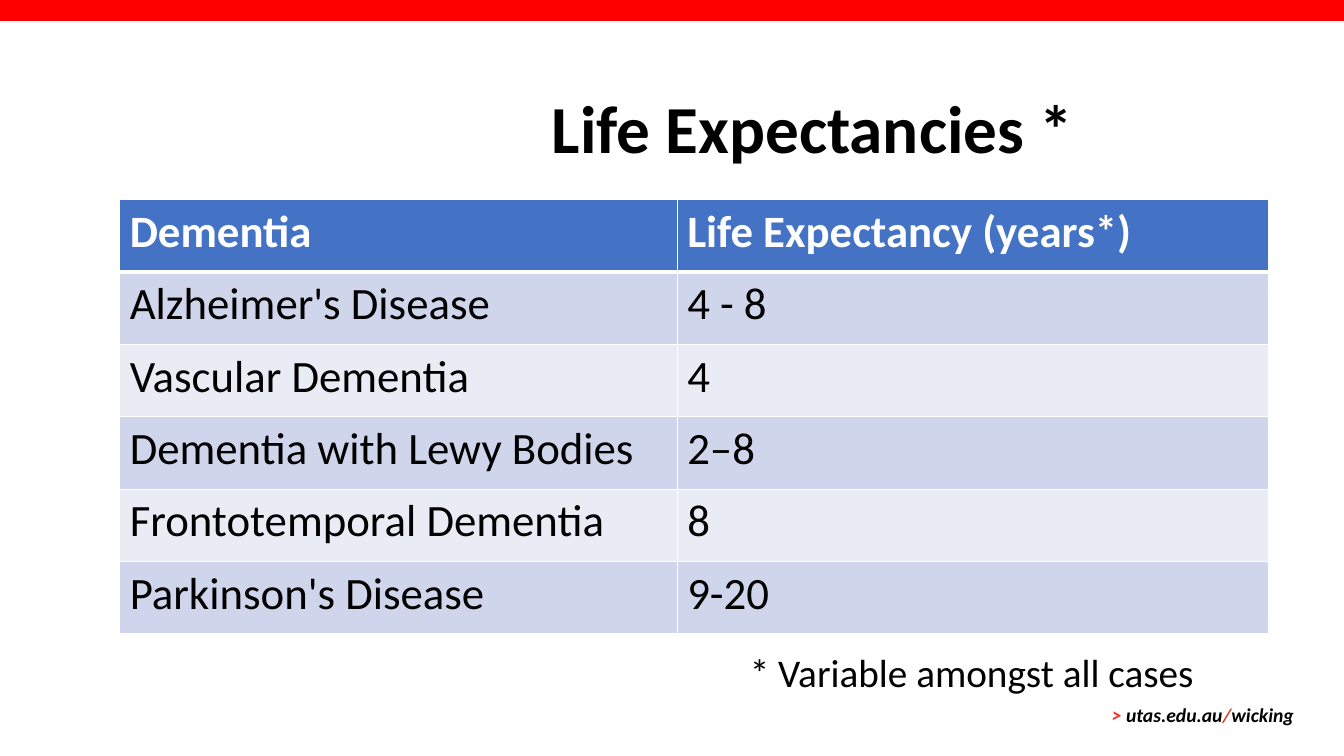
from lxml import etree
from pptx import Presentation
from pptx.dml.color import RGBColor
from pptx.enum.shapes import MSO_SHAPE
from pptx.enum.text import MSO_ANCHOR, MSO_AUTO_SIZE, PP_ALIGN
from pptx.oxml.ns import qn
from pptx.util import Emu, Pt

RECTANGLE = MSO_SHAPE.RECTANGLE
TOP = MSO_ANCHOR.TOP
NO_AUTOFIT = MSO_AUTO_SIZE.NONE
LEFT, RIGHT = PP_ALIGN.LEFT, PP_ALIGN.RIGHT

EMU_PER_PX = 9525
FONT = "Calibri"
BLACK, WHITE, RED, ACCENT_RED = "000000", "FFFFFF", "FF0000", "EE3124"
HEADER_FILL = "4472C4"
BAND_FILLS = ("CFD5EA", "E9EBF5")
COLUMN_WIDTHS = (531, 563)
ROW_HEIGHT = 69

LIFE_EXPECTANCIES = (
    ("Dementia", "Life Expectancy (years*)"),
    ("Alzheimer's Disease", "4 - 8"),
    ("Vascular Dementia", "4"),
    ("Dementia with Lewy Bodies", "2–8"),
    ("Frontotemporal Dementia", "8"),
    ("Parkinson's Disease", "9-20"),
)
WEB_ADDRESS = (
    ("> ", ACCENT_RED),
    ("utas.edu.au", BLACK),
    ("/", ACCENT_RED),
    ("wicking ", BLACK),
)


def px(length):
    return Emu(length * EMU_PER_PX)


def color(hex_string):
    return RGBColor.from_string(hex_string)


def format_font(font, size, hex_string=BLACK, bold=False, italic=False):
    font.name = FONT
    font.size = Pt(size)
    font.bold = bold
    font.italic = italic
    font.color.rgb = color(hex_string)


def prepare_frame(shape, alignment=LEFT, line_spacing=1.0):
    """Set up a top-anchored text frame and return its first paragraph."""
    frame = shape.text_frame
    frame.word_wrap = True
    frame.auto_size = NO_AUTOFIT
    frame.vertical_anchor = TOP
    paragraph = frame.paragraphs[0]
    paragraph.alignment = alignment
    paragraph.line_spacing = line_spacing
    paragraph.space_before = Pt(0)
    return paragraph


def add_bar(slide, left, top, width, height):
    bar = slide.shapes.add_shape(RECTANGLE, px(left), px(top), px(width), px(height))
    bar.shadow.inherit = False
    bar.fill.solid()
    bar.fill.fore_color.rgb = color(RED)
    bar.line.color.rgb = color(RED)
    bar.line.width = Pt(1)


def set_title(slide, text, left, top, width, height):
    title = slide.shapes.title
    title.left, title.top = px(left), px(top)
    title.width, title.height = px(width), px(height)
    paragraph = prepare_frame(title, line_spacing=0.9)
    paragraph.text = text
    format_font(paragraph.font, 48, bold=True)


def add_right_text(slide, left, top, width, height, line_spacing=1.0):
    box = slide.shapes.add_textbox(px(left), px(top), px(width), px(height))
    return prepare_frame(box, RIGHT, line_spacing)


def set_borders(cell, top_width, bottom_width):
    properties = cell._tc.get_or_add_tcPr()
    widths = {"a:lnL": 1, "a:lnR": 1, "a:lnT": top_width, "a:lnB": bottom_width}
    for position, (tag, width) in enumerate(widths.items()):
        line = etree.Element(qn(tag), w=str(Pt(width)))
        fill = etree.SubElement(line, qn("a:solidFill"))
        etree.SubElement(fill, qn("a:srgbClr"), val=WHITE)
        properties.insert(position, line)


def add_table(slide, rows, left, top):
    frame = slide.shapes.add_table(
        len(rows), len(COLUMN_WIDTHS), px(left), px(top),
        px(sum(COLUMN_WIDTHS)), px(ROW_HEIGHT * len(rows)))
    table = frame.table
    for column, width in zip(table.columns, COLUMN_WIDTHS):
        column.width = px(width)
    for row_index, texts in enumerate(rows):
        table.rows[row_index].height = px(ROW_HEIGHT)
        is_header = row_index == 0
        fill = HEADER_FILL if is_header else BAND_FILLS[(row_index - 1) % 2]
        for column_index, text in enumerate(texts):
            cell = table.cell(row_index, column_index)
            cell.fill.solid()
            cell.fill.fore_color.rgb = color(fill)
            # A thicker rule separates the header from the body
            set_borders(cell, 3 if row_index == 1 else 1, 3 if is_header else 1)
            paragraph = cell.text_frame.paragraphs[0]
            paragraph.text = text
            format_font(paragraph.font, 32, WHITE if is_header else BLACK, is_header)


def main():
    presentation = Presentation()
    presentation.slide_width, presentation.slide_height = px(1280), px(720)
    slide = presentation.slides.add_slide(presentation.slide_layouts[5])

    # Top bar and title
    add_bar(slide, -8, -2, 1303, 21)
    set_title(slide, "Life Expectancies *", 516, 86, 606, 104)

    # Life expectancy by type of dementia
    add_table(slide, LIFE_EXPECTANCIES, 114, 190)

    # Footnote
    footnote = add_right_text(slide, 438, 618, 708, 74, line_spacing=0.9)
    footnote.text = "* Variable amongst all cases"
    format_font(footnote.font, 28)

    # Web address
    address = add_right_text(slide, 1047, 665, 199, 38)
    for text, hex_string in WEB_ADDRESS:
        run = address.add_run()
        run.text = text
        format_font(run.font, 14, hex_string, bold=True, italic=True)

    presentation.save("out.pptx")


if __name__ == "__main__":
    main()
